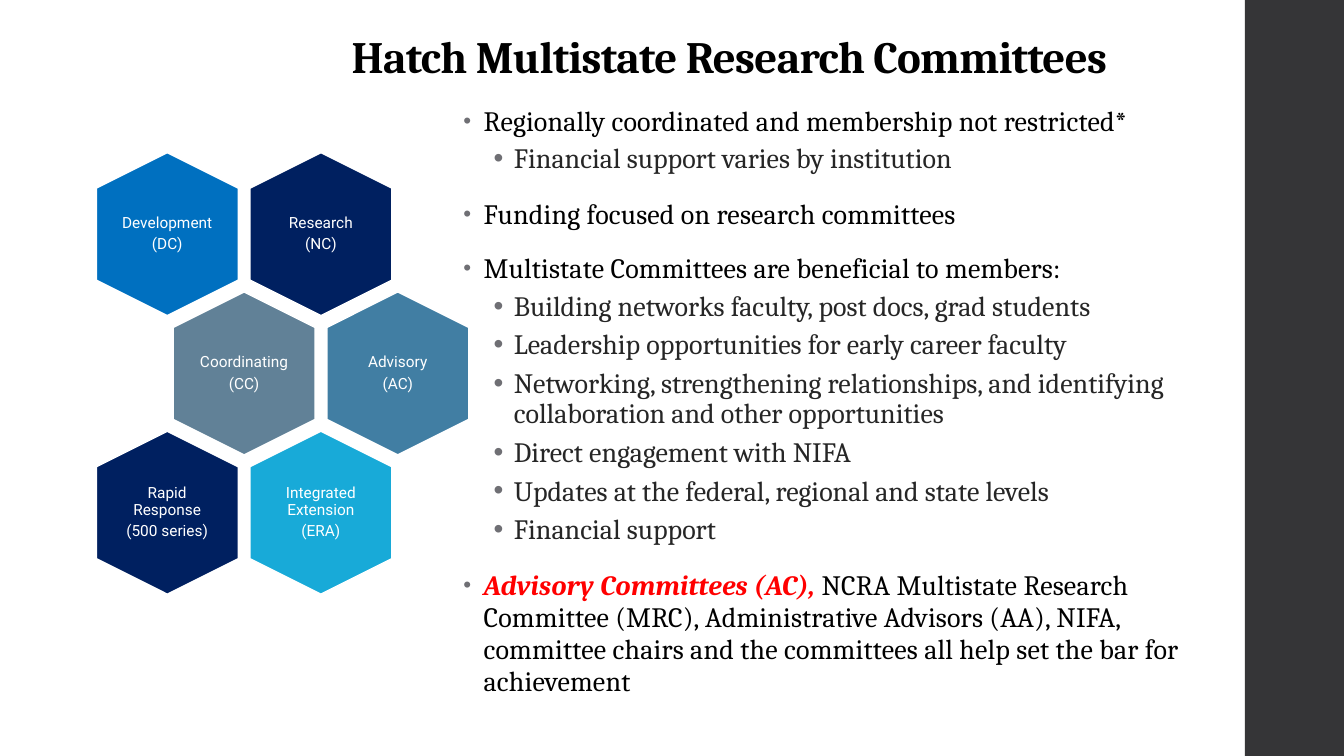
from dataclasses import dataclass

from lxml import etree
from pptx import Presentation
from pptx import util as u
from pptx.dml.color import RGBColor
from pptx.enum import shapes, text
from pptx.oxml import ns


@dataclass(frozen=True)
class Theme:
    """Colours, fonts and type sizes of the deck."""
    band: str = "353537"
    ink: str = "000000"
    soft_ink: str = "262626"
    bullet: str = "6F6F74"
    accent: str = "FF0000"
    white: str = "FFFFFF"
    navy: str = "002060"
    blue: str = "0070C0"
    slate: str = "618197"
    steel: str = "417EA3"
    cyan: str = "18AAD8"
    serif: str = "Cambria"
    sans: str = "Roboto"
    title_size: int = 32
    body_size: int = 20
    label_size: int = 11


@dataclass(frozen=True)
class Box:
    """A region of the page in centimetres."""
    left: float
    top: float
    width: float
    height: float

    def lengths(self):
        """Return the region as lengths."""
        return [u.Cm(side) for side in (self.left, self.top, self.width, self.height)]


@dataclass(frozen=True)
class Level:
    """Paragraph settings of one outline level."""
    indent: float
    line: float
    before: int
    after: int
    bullet_size: int
    color: str
    tracking: int


THEME = Theme()
HANGING = 0.51
LEVELS = [
    Level(0.51, 0.95, 14, 2, 80, THEME.ink, 10),
    Level(1.27, 0.9, 3, 3, 100, THEME.soft_ink, 0),
]
LEAD = "Advisory Committees (AC), "
POINTS = [
    (0, "Regionally coordinated and membership not restricted*"),
    (1, "Financial support varies by institution"),
    (0, "Funding focused on research committees"),
    (0, "Multistate Committees are beneficial to members:"),
    (1, "Building networks faculty, post docs, grad students"),
    (1, "Leadership opportunities for early career faculty"),
    (1, "Networking, strengthening relationships, and identifying "
        "collaboration and other opportunities"),
    (1, "Direct engagement with NIFA"),
    (1, "Updates at the federal, regional and state levels"),
    (1, "Financial support"),
    (0, "NCRA Multistate Research Committee (MRC), Administrative Advisors (AA), "
        "NIFA, committee chairs and the committees all help set the bar for achievement"),
]
COMMITTEES = [
    [("Development", "(DC)", THEME.blue), ("Research", "(NC)", THEME.navy)],
    [("Coordinating", "(CC)", THEME.slate), ("Advisory", "(AC)", THEME.steel)],
    [("Rapid Response", "(500 series)", THEME.navy),
     ("Integrated Extension", "(ERA)", THEME.cyan)],
]


def style_span(span, font, size, color, tracking=0, bold=False, italic=False):
    """Format one run of text."""
    span.font.name = font
    span.font.size = u.Pt(size)
    span.font.bold = bold
    span.font.italic = italic
    span.font.color.rgb = RGBColor.from_string(color)
    span._r.get_or_add_rPr().set("spc", str(tracking))


def add_bullet(para, level):
    """Give a paragraph a hanging round bullet."""
    props = para._p.get_or_add_pPr()
    props.set("marL", str(u.Cm(level.indent)))
    props.set("indent", str(-u.Cm(HANGING)))
    color = etree.SubElement(props, ns.qn("a:buClr"))
    etree.SubElement(color, ns.qn("a:srgbClr"), val=THEME.bullet)
    etree.SubElement(props, ns.qn("a:buSzPct"), val=str(level.bullet_size * 1000))
    etree.SubElement(props, ns.qn("a:buFont"), typeface="Arial")
    etree.SubElement(props, ns.qn("a:buChar"), char="•")


def draw_band(page, box):
    """Draw the dark band at the side of the page."""
    band = page.shapes.add_shape(shapes.MSO_SHAPE.RECTANGLE, *box.lengths())
    band.shadow.inherit = False
    band.fill.solid()
    band.fill.fore_color.rgb = RGBColor.from_string(THEME.band)
    band.line.fill.background()


def draw_title(page, box, words):
    """Write the heading on the bottom edge of its box."""
    frame = page.shapes.add_textbox(*box.lengths()).text_frame
    frame.word_wrap = True
    frame.vertical_anchor = text.MSO_ANCHOR.BOTTOM
    frame.text = words
    para = frame.paragraphs[0]
    para.line_spacing = 0.9
    style_span(para.runs[0], THEME.serif, THEME.title_size, THEME.ink, -50, bold=True)


def draw_points(page, box, points):
    """Write the two-level bullet list, with a red lead on the last point."""
    frame = page.shapes.add_textbox(*box.lengths()).text_frame
    frame.word_wrap = True
    frame.text = "\n".join(words for _, words in points)
    for para, (depth, _) in zip(frame.paragraphs, points):
        level = LEVELS[depth]
        para.level = depth
        para.line_spacing = level.line
        para.space_before = u.Pt(level.before)
        para.space_after = u.Pt(level.after)
        add_bullet(para, level)
        style_span(para.runs[0], THEME.serif, THEME.body_size, level.color, level.tracking)
    closing = frame.paragraphs[-1]
    lead = closing.add_run()
    lead.text = LEAD
    style_span(lead, THEME.serif, THEME.body_size, THEME.accent, 10, bold=True, italic=True)
    closing.runs[0]._r.addprevious(lead._r)


def draw_committee(group, box, name, code, color):
    """Draw one upright hexagon with its label centred on it."""
    cell = group.shapes.add_shape(shapes.MSO_SHAPE.HEXAGON, *box.lengths())
    cell.rotation = 90
    cell.adjustments[0] = 0.25
    cell.shadow.inherit = False
    cell.fill.solid()
    cell.fill.fore_color.rgb = RGBColor.from_string(color)
    cell.line.color.rgb = RGBColor.from_string(THEME.white)
    cell.line.width = u.Pt(1.1)

    width, height = 2.46, 2.84
    label = Box(box.left + (box.width - width) / 2,
                box.top + (box.height - height) / 2, width, height)
    frame = group.shapes.add_textbox(*label.lengths()).text_frame
    frame.word_wrap = True
    frame.vertical_anchor = text.MSO_ANCHOR.MIDDLE
    frame.margin_left = frame.margin_right = frame.margin_top = frame.margin_bottom = 0
    frame.text = f"{name}\n{code}"
    for para in frame.paragraphs:
        para.alignment = text.PP_ALIGN.CENTER
        para.line_spacing = 0.9
        para.space_after = u.Pt(3.5)
        style_span(para.runs[0], THEME.sans, THEME.label_size, THEME.white)


def draw_honeycomb(page, box, rows):
    """Lay out the committees in rows, every second row shifted by half a cell."""
    group = page.shapes.add_group_shape()
    cell_width, cell_height = 4.11, 3.58
    step_x = (box.width - cell_width) / 1.5
    step_y = (box.height - cell_height) / (len(rows) - 1)
    for row, committees in enumerate(rows):
        for column, committee in enumerate(committees):
            left = box.left + (column + row % 2 / 2) * step_x
            cell = Box(left, box.top + row * step_y, cell_width, cell_height)
            draw_committee(group, cell, *committee)


def main():
    """Build the deck and save it."""
    deck = Presentation()
    deck.slide_width = u.Cm(33.87)
    deck.slide_height = u.Cm(19.05)
    page = deck.slides.add_slide(deck.slide_layouts[6])
    draw_band(page, Box(31.37, 0, 2.5, 19.05))
    draw_title(page, Box(8.61, -1.45, 25.83, 3.68), "Hatch Multistate Research Committees")
    draw_points(page, Box(11.43, 2.54, 20.19, 15.88), POINTS)
    draw_honeycomb(page, Box(2.16, 4.11, 9.92, 10.6), COMMITTEES)
    deck.save("out.pptx")


if __name__ == "__main__":
    main()
